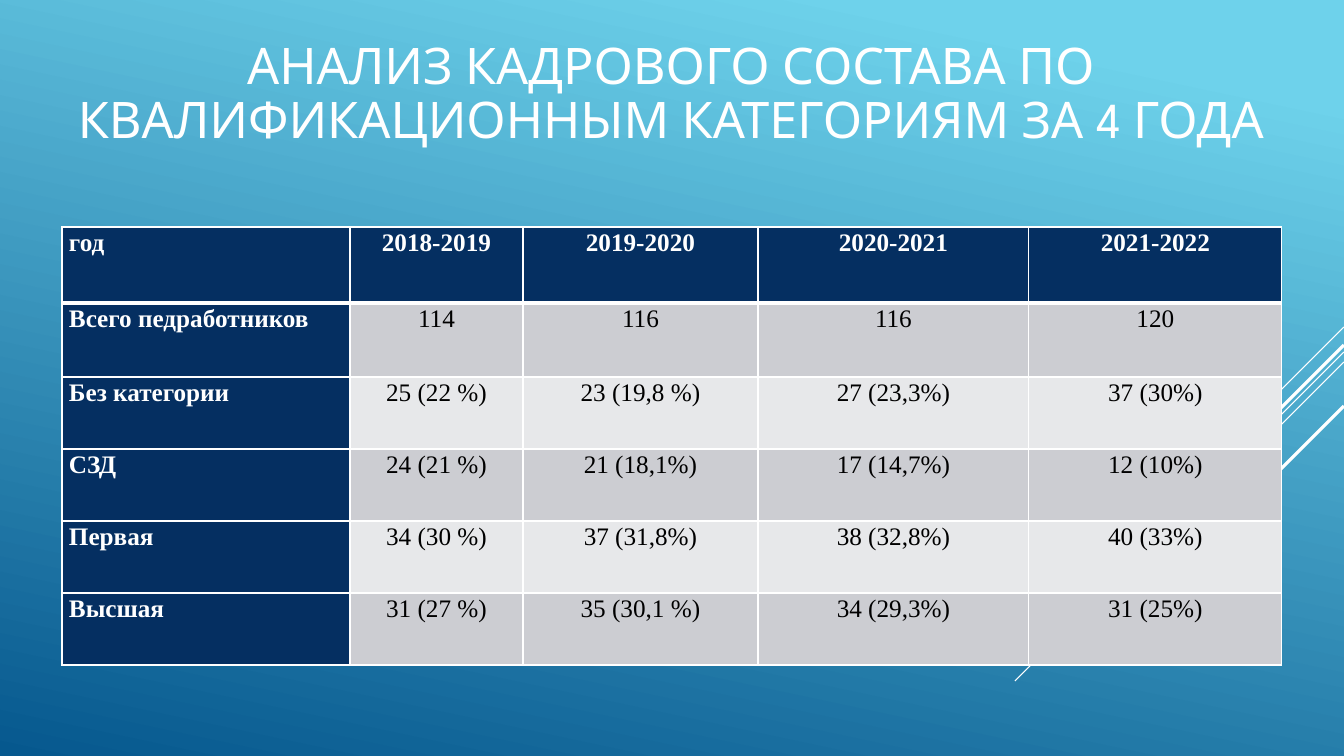
from pptx import Presentation, util as u
from pptx.dml.color import RGBColor
from pptx.enum import shapes, text
from pptx.oxml import parse_xml
from pptx.oxml.ns import nsdecls

WHITE, BLACK, NAVY = "FFFFFF", "000000", "052F61"
BANDS = ["CCCDD2", "E7E8EA"]
WIDTH, HEIGHT = 1344, 756

TITLE = "АНАЛИЗ КАДРОВОГО СОСТАВА ПО КВАЛИФИКАЦИОННЫМ КАТЕГОРИЯМ ЗА 4 ГОДА"
# Diagonals from the right edge: start y, run, weight in points
RAYS = [(327, 101, 0.75), (352, 329, 0.75), (362, 209, 0.75),
        (345, 193, 2.25), (406, 140, 2.25)]
COLS = [288, 173, 235, 271, 253]
ROWS = [76, 74, 72, 72, 72, 72]
STAFF = [
    ["год", "2018-2019", "2019-2020", "2020-2021", "2021-2022"],
    ["Всего педработников", "114", "116", "116", "120"],
    ["Без категории", "25 (22 %)", "23 (19,8 %)", "27 (23,3%)", "37 (30%)"],
    ["СЗД", "24 (21 %)", "21 (18,1%)", "17 (14,7%)", "12 (10%)"],
    ["Первая", "34 (30 %)", "37 (31,8%)", "38 (32,8%)", "40 (33%)"],
    ["Высшая", "31 (27 %)", "35 (30,1 %)", "34 (29,3%)", "31 (25%)"],
]


def px(n):
    return u.Emu(round(n * 914400 / 100.8))


def rgb(code):
    return RGBColor.from_string(code)


def style(para, face, size, color, align, space, bold=False):
    font = para.font
    font.name, font.size, font.bold = face, u.Pt(size), bold
    font.color.rgb = rgb(color)
    para.alignment, para.line_spacing = align, space


def paint(slide):
    fill = slide.background.fill
    fill.gradient()
    fill.gradient_angle = 258
    stops = [(0.1, "6ED2EB"), (1, "06588E")]
    for stop, (place, color) in zip(fill.gradient_stops, stops):
        stop.position, stop.color.rgb = place, rgb(color)


def add_ray(slide, y, run, weight):
    ray = slide.shapes.add_connector(
        shapes.MSO_CONNECTOR.STRAIGHT,
        px(WIDTH), px(y), px(WIDTH - run), px(y + run))
    ray.line.color.rgb, ray.line.width = rgb(WHITE), u.Pt(weight)
    ray._element.spPr.append(parse_xml(f"<a:effectLst {nsdecls('a')}/>"))


def add_title(slide):
    box = slide.shapes.add_textbox(px(44), px(12), px(1254), px(166))
    frame = box.text_frame
    frame.word_wrap = True
    frame.vertical_anchor = text.MSO_ANCHOR.MIDDLE
    frame.text = TITLE
    style(frame.paragraphs[0], "League Spartan", 36, WHITE,
          text.PP_ALIGN.CENTER, 0.9)


def edge(cell, side, weight):
    cell._tc.get_or_add_tcPr().append(parse_xml(
        f'<a:ln{side} {nsdecls("a")} w="{u.Pt(weight)}"><a:solidFill>'
        f'<a:srgbClr val="{WHITE}"/></a:solidFill></a:ln{side}>'))


def fill_cell(cell, words, row, col):
    head = row == 0 or col == 0
    # The rule under the header row is the thick one
    for side in "LRTB":
        thick = (row, side) in [(0, "B"), (1, "T")]
        edge(cell, side, 3 if thick else 1)
    cell.fill.solid()
    cell.fill.fore_color.rgb = rgb(NAVY if head else BANDS[(row - 1) % 2])
    cell.margin_left = cell.margin_right = px(7)
    cell.margin_top = cell.margin_bottom = 0
    cell.text = words
    align = text.PP_ALIGN.CENTER if col else text.PP_ALIGN.JUSTIFY
    style(cell.text_frame.paragraphs[0], "Times New Roman", 18,
          WHITE if head else BLACK, align, 1.07, head)


def add_grid(slide):
    grid = slide.shapes.add_table(
        len(ROWS), len(COLS), px(62), px(227),
        px(sum(COLS)), px(sum(ROWS))).table
    for col, width in zip(grid.columns, COLS):
        col.width = px(width)
    for row, height in zip(grid.rows, ROWS):
        row.height = px(height)
    for r, line in enumerate(STAFF):
        for c, words in enumerate(line):
            fill_cell(grid.cell(r, c), words, r, c)


def main():
    deck = Presentation()
    deck.slide_width, deck.slide_height = px(WIDTH), px(HEIGHT)
    slide = deck.slides.add_slide(deck.slide_layouts[6])

    # Backdrop
    paint(slide)
    for ray in RAYS:
        add_ray(slide, *ray)

    # Content
    add_title(slide)
    add_grid(slide)
    deck.save("out.pptx")


if __name__ == "__main__":
    main()
